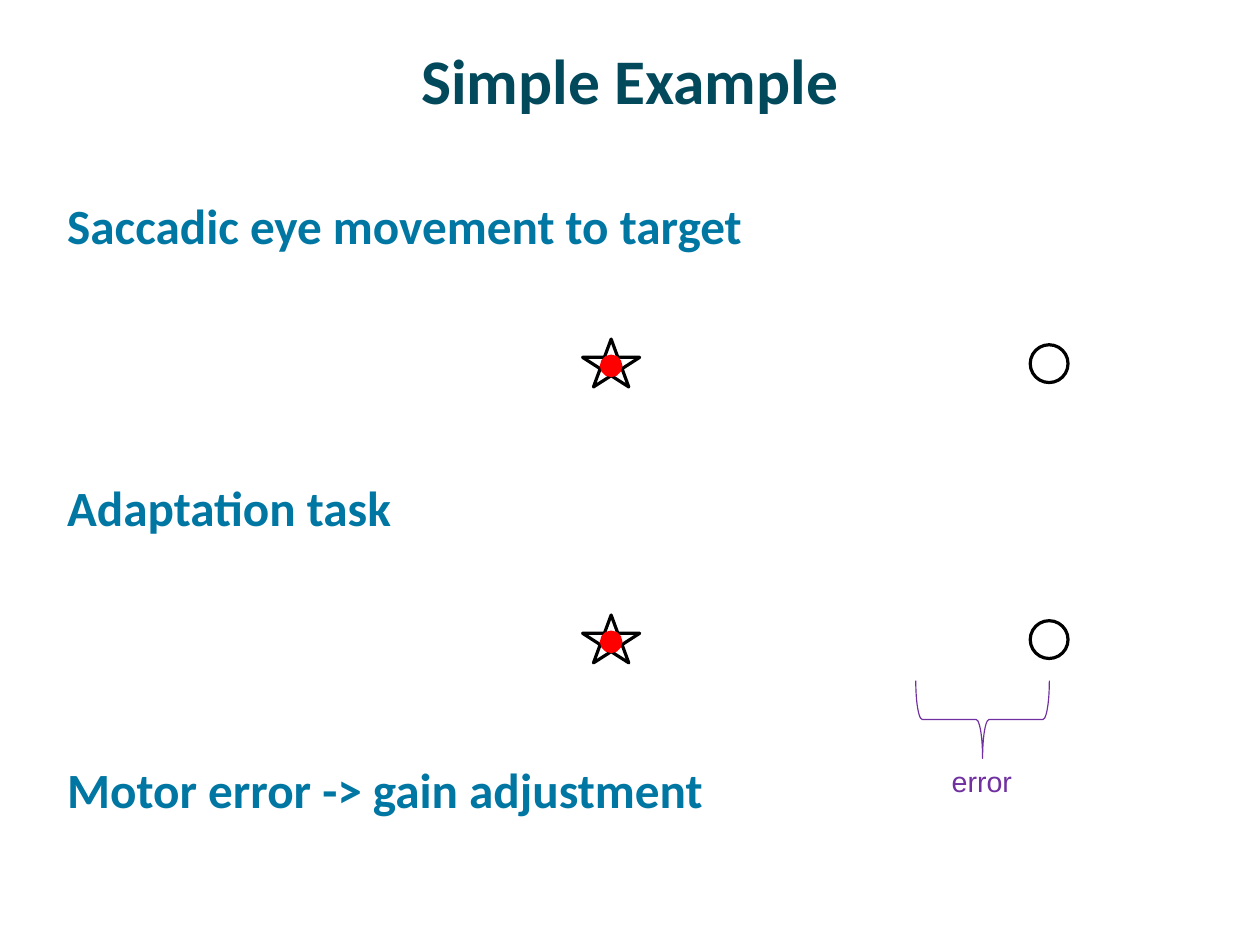
from pptx import Presentation
from pptx.dml.color import RGBColor
from pptx.enum.shapes import MSO_SHAPE
from pptx.enum.text import MSO_ANCHOR, PP_ALIGN
from pptx.util import Pt

TITLE = {"name": "Calibri", "size": Pt(40), "bold": True}
HEADING = {"name": "Calibri", "size": Pt(31), "bold": True}
LABEL = {"name": "Arial", "size": Pt(18), "bold": False}
HEADINGS = [
    "Saccadic eye movement to target",
    "Adaptation task",
    "Motor error -> gain adjustment",
]
TASK_TOPS = [213.6, 387.4]


def set_color(target, color):
    target.rgb = RGBColor.from_string(color)


def set_values(target, values):
    for name, value in values.items():
        setattr(target, name, value)


def add_text(page, lines, place, font, color, frame_format, para_format, gap=0):
    box = page.shapes.add_textbox(*map(Pt, place))
    frame = box.text_frame
    set_values(frame, frame_format)
    for index, line in enumerate(lines):
        para = frame.paragraphs[0] if index == 0 else frame.add_paragraph()
        set_values(para, para_format)
        para.space_before = Pt(gap if index else 0)
        span = para.add_run()
        span.text = line
        set_values(span.font, font)
        set_color(span.font.color, color)


def add_outline(page, kind, place, color, width, fill=None):
    shape = page.shapes.add_shape(kind, *map(Pt, place))
    shape.shadow.inherit = False
    if fill:
        shape.fill.solid()
        set_color(shape.fill.fore_color, fill)
    else:
        shape.fill.background()
    set_color(shape.line.color, color)
    shape.line.width = Pt(width)
    return shape


def add_task(page, top):
    add_outline(page, MSO_SHAPE.STAR_5_POINT, (367, top, 36, 30.2), "000000", 2)
    add_outline(page, MSO_SHAPE.OVAL, (649, top + 3.6, 23.8, 23.8), "000000", 2)
    add_outline(page, MSO_SHAPE.OVAL, (378.9, top + 10.8, 12.2, 12.2), "FF0000", 2, "FF0000")


def main():
    deck = Presentation()
    deck.slide_width = Pt(793.7)
    deck.slide_height = Pt(595.28)
    page = deck.slides.add_slide(deck.slide_layouts[6])

    add_text(page, ["Simple Example"], (39.6, 13.3, 714.2, 72.7), TITLE, "03495C",
             {"word_wrap": True, "vertical_anchor": MSO_ANCHOR.MIDDLE},
             {"alignment": PP_ALIGN.CENTER})
    add_text(page, HEADINGS, (26.6, 118.8, 728, 454.3), HEADING, "0076A3",
             {"word_wrap": True, "margin_left": Pt(15.8), "margin_top": Pt(4.3)},
             {"alignment": PP_ALIGN.LEFT}, gap=140.3)

    for top in TASK_TOPS:
        add_task(page, top)

    brace = add_outline(page, MSO_SHAPE.RIGHT_BRACE, (594.4, 411.1, 49, 84.2), "7030A0", 0.75)
    brace.rotation = 90
    add_text(page, ["error"], (592.4, 477.4, 53.3, 28.8), LABEL, "7030A0",
             {"word_wrap": False}, {"alignment": PP_ALIGN.LEFT})

    deck.save("out.pptx")


if __name__ == "__main__":
    main()
